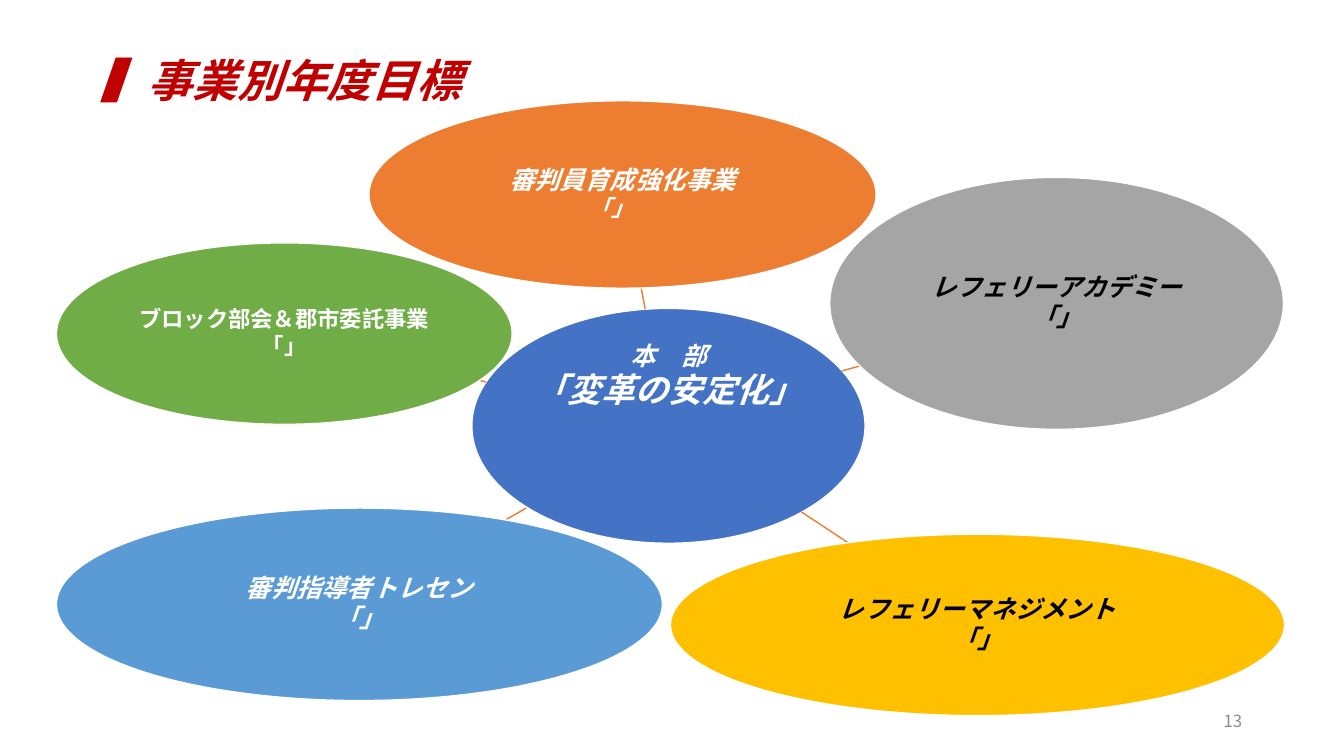
from pptx import Presentation
from pptx.dml.color import RGBColor
from pptx.enum.shapes import MSO_CONNECTOR as CONN, MSO_SHAPE as SHAPE
from pptx.enum.text import MSO_ANCHOR as ANCHOR, MSO_AUTO_SIZE as FIT, PP_ALIGN as ALIGN
from pptx.oxml.ns import qn
from pptx.util import Inches, Pt
from lxml.etree import SubElement

COLORS = {
    "white": "FFFFFF", "black": "000000", "red": "C00000", "number": "8C8C8C",
    "blue": "4472C4", "orange": "ED7D31", "gray": "A5A5A5",
    "gold": "FFC000", "sky": "5B9BD5", "green": "70AD47",
}


class SlideBuilder:
    font = "Noto Sans CJK JP"

    def __init__(self, prs):
        self.s = prs.slides.add_slide(prs.slide_layouts[5])

    def color(self, name):
        return RGBColor.from_string(COLORS[name])

    def run(self, p, text, size, color, bold=False, italic=False):
        r = p.add_run()
        r.text = text
        f = r.font
        f.name, f.size, f.bold, f.italic = self.font, Pt(size), bold, italic
        f.color.rgb = self.color(color)
        SubElement(r.font._element, qn("a:ea")).set("typeface", self.font)

    def title(self, text, box):
        sp = self.s.shapes.title
        sp.left, sp.top, sp.width, sp.height = map(Inches, box)
        tf = sp.text_frame
        tf.auto_size, tf.vertical_anchor = FIT.NONE, ANCHOR.MIDDLE
        p = tf.paragraphs[0]
        p.alignment, p.line_spacing = ALIGN.LEFT, 0.9
        self.run(p, text, 32, "red", True, True)

    def page_number(self, text, box):
        tf = self.s.shapes.add_textbox(*map(Inches, box)).text_frame
        tf.word_wrap, tf.vertical_anchor = True, ANCHOR.MIDDLE
        p = tf.paragraphs[0]
        p.alignment = ALIGN.RIGHT
        self.run(p, text, 12, "number")

    def spoke(self, ends):
        cn = self.s.shapes.add_connector(CONN.STRAIGHT, *map(Inches, ends))
        cn.line.color.rgb, cn.line.width = self.color("orange"), Pt(1)
        SubElement(cn._element.spPr, qn("a:effectLst"))

    def ellipse(self, box, fill, lines, color="white", italic=True, anchor=ANCHOR.MIDDLE):
        sp = self.s.shapes.add_shape(SHAPE.OVAL, *map(Inches, box))
        sp.shadow.inherit = False
        sp.fill.solid()
        sp.fill.fore_color.rgb = self.color(fill)
        sp.line.color.rgb, sp.line.width = self.color("white"), Pt(1)
        tf = sp.text_frame
        tf.word_wrap, tf.vertical_anchor = True, anchor
        tf.margin_left = tf.margin_right = tf.margin_top = tf.margin_bottom = Inches(0.01)
        for i, (text, size) in enumerate(lines):
            p = tf.add_paragraph() if i else tf.paragraphs[0]
            p.alignment, p.line_spacing, p.space_after = ALIGN.CENTER, 0.9, Pt(2)
            self.run(p, text, size, color, True, italic)


# Each programme: spoke ends, ellipse box, fill, lines, text colour, italic
PROGRAMMES = [
    ((6.4, 3.07, 6.36, 2.86), (3.66, 1, 5.03, 1.86), "orange",
     [("審判員育成強化事業", 18), ("「」　", 16)], "white", True),
    ((8.35, 3.68, 8.53, 3.63), (8.23, 1.76, 4.5, 2.5), "gray",
     [("レフェリーアカデミー", 18), ("「」", 18)], "black", True),
    ((7.95, 5.08, 8.42, 5.39), (6.65, 5.3, 6.09, 1.8), "gold",
     [("レフェリーマネジメント", 18), ("「」", 18)], "black", True),
    ((5.22, 5.04, 5.01, 5.16), (0.56, 5.04, 6.01, 1.91), "sky",
     [("審判指導者トレセン", 18), ("「」", 18)], "white", True),
    ((4.82, 3.79, 4.74, 3.77), (0.56, 2.41, 4.52, 1.8), "green",
     [("ブロック部会＆郡市委託事業", 16), ("「」", 16)], "white", False),
]


def main():
    prs = Presentation()
    prs.slide_width, prs.slide_height = Inches(13.33), Inches(7.5)
    slide = SlideBuilder(prs)

    # Heading and page number
    slide.title("▍事業別年度目標", (0.92, 0.4, 11.5, 0.84))
    slide.page_number("13", (9.42, 6.95, 3, 0.4))

    # Hub
    slide.ellipse((4.68, 3.06, 3.9, 2.33), "blue",
                  [("本　部", 18), ("「変革の安定化」", 24)], anchor=ANCHOR.TOP)

    # Programmes around the hub
    for ends, box, fill, lines, color, italic in PROGRAMMES:
        slide.spoke(ends)
        slide.ellipse(box, fill, lines, color, italic)

    prs.save("out.pptx")


if __name__ == "__main__":
    main()
